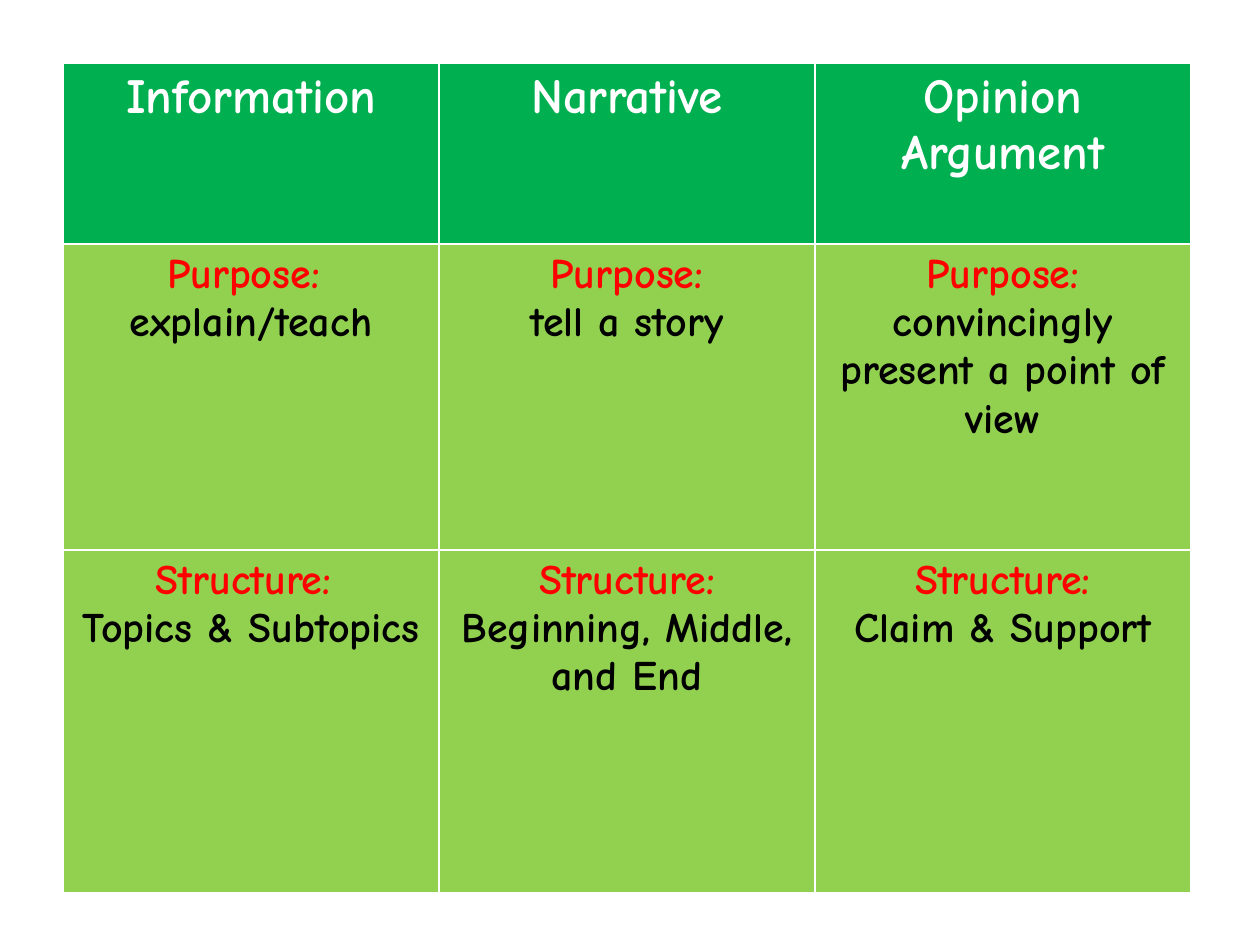
import pptx
import pptx.dml.color
import pptx.enum.text
import pptx.util

EMU_PER_PX = 914400 / 126
FONT = "Comic Neue"
COLORS = {
    "header_fill": "00B050",
    "body_fill": "92D050",
    "header_text": "FFFFFF",
    "label": "FF0000",
    "body_text": "000000",
}
COLUMN_WIDTH = 376
ROW_HEIGHTS = [181, 306, 343]
HEADERS = [["Information"], ["Narrative"], ["Opinion", "Argument"]]
BODY_ROWS = [
    [
        ["Purpose: ", "explain/teach"],
        ["Purpose:", "tell a story"],
        ["Purpose:", "convincingly present a point of view"],
    ],
    [
        ["Structure: ", "Topics & Subtopics"],
        ["Structure:", "Beginning, Middle, and End"],
        ["Structure:", "Claim & Support"],
    ],
]


def px(length):
    return pptx.util.Emu(round(length * EMU_PER_PX))


def rgb(name):
    return pptx.dml.color.RGBColor.from_string(COLORS[name])


def fill_cell(cell, lines, fill, size, line_colors):
    """Write one centred paragraph per line, each in its own colour."""
    cell.fill.solid()
    cell.fill.fore_color.rgb = rgb(fill)
    cell.text_frame.text = "\n".join(lines)
    for para, color in zip(cell.text_frame.paragraphs, line_colors):
        para.alignment = pptx.enum.text.PP_ALIGN.CENTER
        font = para.runs[0].font
        font.name = FONT
        font.size = pptx.util.Pt(size)
        font.bold = True
        font.color.rgb = rgb(color)


def add_writing_types_table(slide):
    column_count = len(HEADERS)
    frame = slide.shapes.add_table(
        len(ROW_HEIGHTS), column_count, px(63), px(63),
        px(COLUMN_WIDTH * column_count), px(sum(ROW_HEIGHTS)))
    table = frame.table
    for column in table.columns:
        column.width = px(COLUMN_WIDTH)
    for row, height in zip(table.rows, ROW_HEIGHTS):
        row.height = px(height)

    for column_index, lines in enumerate(HEADERS):
        fill_cell(table.cell(0, column_index), lines, "header_fill", 28,
                  ["header_text"] * len(lines))
    for row_index, body_row in enumerate(BODY_ROWS, start=1):
        for column_index, lines in enumerate(body_row):
            fill_cell(table.cell(row_index, column_index), lines, "body_fill", 24,
                      ["label", "body_text"])


def main():
    deck = pptx.Presentation()
    deck.slide_width = px(1260)
    deck.slide_height = px(945)
    blank_layout = deck.slide_layouts[6]
    slide = deck.slides.add_slide(blank_layout)
    add_writing_types_table(slide)
    deck.save("out.pptx")


if __name__ == "__main__":
    main()
